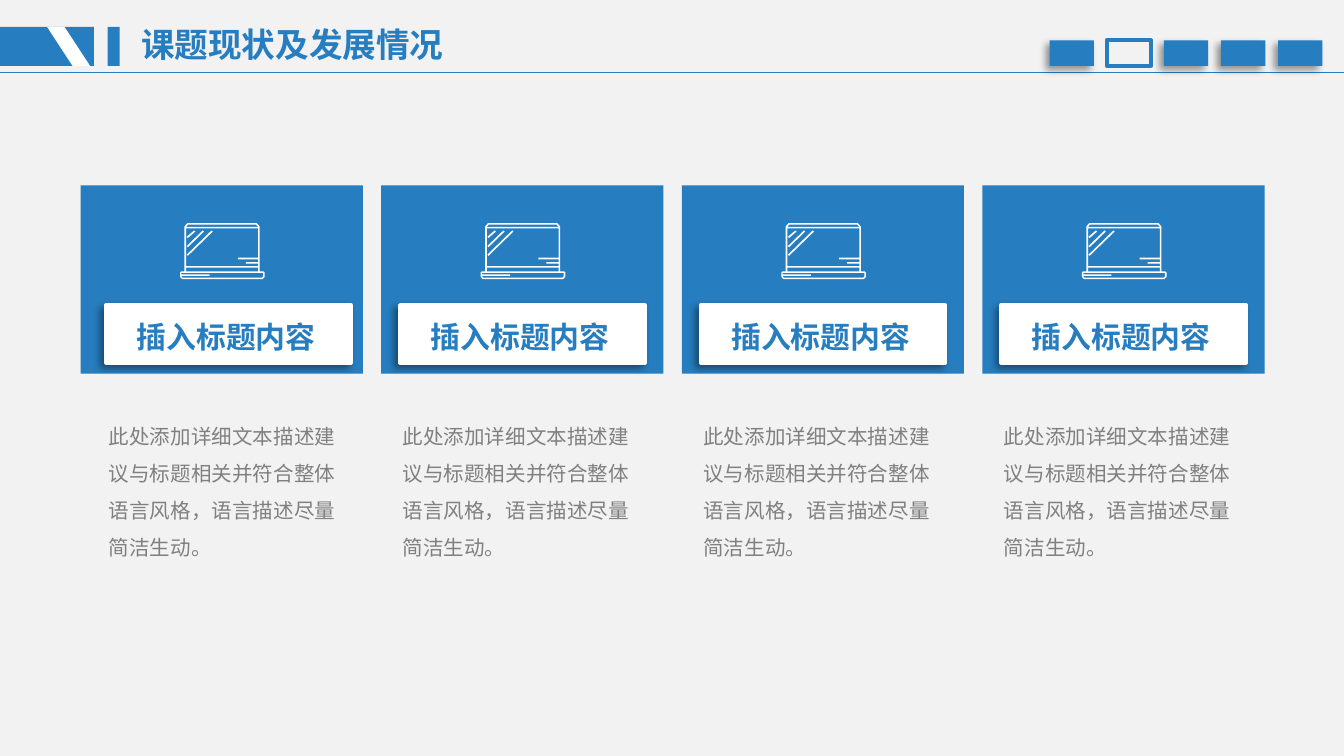
from lxml import etree
from pptx import Presentation
from pptx.dml.color import RGBColor
from pptx.enum.shapes import MSO_CONNECTOR, MSO_SHAPE
from pptx.enum.text import MSO_ANCHOR, MSO_AUTO_SIZE, PP_ALIGN
from pptx.oxml.ns import qn
from pptx.util import Emu, Inches, Pt

RECTANGLE = MSO_SHAPE.RECTANGLE
STRAIGHT = MSO_CONNECTOR.STRAIGHT
LEFT = PP_ALIGN.LEFT
TOP = MSO_ANCHOR.TOP
FIT_SHAPE = MSO_AUTO_SIZE.SHAPE_TO_FIT_TEXT
NO_FIT = MSO_AUTO_SIZE.NONE

FONT = "Noto Sans CJK SC"
COLORS = {"blue": "267DBF", "white": "FFFFFF", "background": "F2F2F2",
          "grey": "808080", "shadow": "000000"}
WIDTH = 10
HEIGHT = WIDTH * 9 / 16

# Grid, in inches
COLUMNS, COLUMN_LEFT, LAST_COLUMN_LEFT = 4, 0.6, 7.31
COLUMN_STEP = (LAST_COLUMN_LEFT - COLUMN_LEFT) / (COLUMNS - 1)
MARKERS, MARKER_LEFT, LAST_MARKER_LEFT = 5, 7.81, 9.51
MARKER_STEP = (LAST_MARKER_LEFT - MARKER_LEFT) / (MARKERS - 1)
CURRENT_MARKER = 1
FIRST_COLUMN_SHIFT = 0.05

TITLE = "课题现状及发展情况"
LABEL = "插入标题内容"
BODY = "此处添加详细文本描述建议与标题相关并符合整体语言风格，语言描述尽量简洁生动。"

# Laptop outline, its openings and the screen glare, in thousandths of an inch
LAPTOP = [
    [(33, 25), (55, 0), (570, 0), (592, 25), (592, 360), (622, 360), (630, 368),
     (630, 400), (615, 416), (15, 416), (0, 400), (0, 368), (8, 360), (33, 360)],
    [(46, 28), (60, 11), (565, 11), (581, 28)],
    [(46, 39), (581, 39), (581, 258), (430, 258), (430, 270), (581, 270),
     (581, 290), (490, 290), (490, 302), (581, 302), (581, 320), (46, 320)],
    [(46, 331), (581, 331), (581, 360), (46, 360)],
    [(11, 371), (618, 371), (618, 398), (610, 405), (18, 405), (11, 397),
     (11, 392), (220, 392), (220, 381), (11, 381)],
] + [
    [(50, bottom - 5), (end - 5, 55), (end + 4, 63), (58, bottom + 4)]
    for end, bottom in [(110, 107), (174, 176), (240, 240)]
]


def rgb(name):
    return RGBColor.from_string(COLORS[name])


def style_shape(shape, fill=None, line=None, width=2):
    shape.shadow.inherit = False
    if fill:
        shape.fill.solid()
        shape.fill.fore_color.rgb = rgb(fill)
    else:
        shape.fill.background()
    if line:
        shape.line.color.rgb = rgb(line)
        shape.line.width = Pt(width)
    else:
        shape.line.fill.background()


def add_rectangle(shapes, left, top, width, height, **style):
    shape = shapes.add_shape(RECTANGLE, Inches(left), Inches(top),
                             Inches(width), Inches(height))
    style_shape(shape, **style)
    return shape


def add_shadow(shape):
    effects = shape.element.spPr.find(qn("a:effectLst"))
    shadow = etree.SubElement(effects, qn("a:outerShdw"), blurRad=str(Pt(4)),
                              dist=str(Pt(3)), dir=str(135 * 60000),
                              algn="tr", rotWithShape="0")
    color = etree.SubElement(shadow, qn("a:srgbClr"), val=COLORS["shadow"])
    etree.SubElement(color, qn("a:alpha"), val="40000")


def add_outline(shapes, left, top, contours, fill):
    builder = None
    for first, *rest in contours:
        if builder is None:
            builder = shapes.build_freeform(*first, scale=Inches(1) / 1000)
        else:
            builder.move_to(*first)
        builder.add_line_segments(rest, close=True)
    shape = builder.convert_to_shape(Inches(left), Inches(top))
    style_shape(shape, fill=fill)


def write_text(shape, text, size, color, bold=False, spacing=None):
    frame = shape.text_frame
    frame.word_wrap = True
    frame.vertical_anchor = TOP
    paragraph = frame.paragraphs[0]
    paragraph.alignment = LEFT
    if spacing:
        paragraph.line_spacing = spacing
    run = paragraph.add_run()
    run.text = text
    run.font.name = FONT
    run.font.size = Pt(size)
    run.font.bold = bold
    run.font.color.rgb = rgb(color)
    latin = run.font._element.find(qn("a:latin"))
    latin.addnext(latin.makeelement(qn("a:ea"), {"typeface": FONT}))
    return frame


def add_header(slide):
    shapes = slide.shapes
    # Emblem with its slanted stripe
    add_rectangle(shapes, 0, 0.2, 0.7, 0.29, fill="blue")
    stripe = [(350, 200), (480, 200), (670, 490), (540, 490)]
    add_outline(shapes, 0, 0, [stripe], "white")
    add_rectangle(shapes, 0.8, 0.2, 0.09, 0.29, fill="blue")

    # Title
    title = shapes.title
    title.left, title.top = Inches(0.95), Inches(0.13)
    title.width, title.height = Inches(2.51), Inches(0.4)
    write_text(title, TITLE, 18, "blue", bold=True).auto_size = FIT_SHAPE

    # Rule across the slide
    rule = shapes.add_connector(STRAIGHT, 0, Inches(0.54), Inches(WIDTH), Inches(0.54))
    rule.line.color.rgb = rgb("blue")
    rule.line.width = Pt(1)
    etree.SubElement(rule._element.spPr, qn("a:effectLst"))

    # Section markers
    for index in range(MARKERS):
        box = (MARKER_LEFT + index * MARKER_STEP, 0.3, 0.33, 0.19)
        if index == CURRENT_MARKER:
            add_rectangle(shapes, *box, line="blue")
        else:
            add_shadow(add_rectangle(shapes, *box, fill="blue"))


def add_label(shapes, left, top):
    group = shapes.add_group_shape()
    plate = add_rectangle(group.shapes, left, top, 1.82, 0.43,
                          fill="white", line="white")
    add_shadow(plate)
    box = group.shapes.add_textbox(Inches(left + 0.13), Inches(top + 0.05),
                                   Inches(1.69), Inches(0.37))
    write_text(box, LABEL, 16, "blue", bold=True).auto_size = FIT_SHAPE


def add_body(shapes, left, top):
    box = shapes.add_textbox(Inches(left), Inches(top), Inches(2.05), Inches(1.29))
    frame = write_text(box, BODY, 11, "grey", spacing=1.5)
    frame.auto_size = NO_FIT
    frame.margin_left = frame.margin_right = Inches(0.16)
    frame.margin_top = frame.margin_bottom = Emu(0)


def add_card(shapes, column):
    left = COLUMN_LEFT + column * COLUMN_STEP
    shift = FIRST_COLUMN_SHIFT if column == 0 else 0
    add_rectangle(shapes, left, 1.38, 2.1, 1.4, fill="blue")
    add_outline(shapes, left + 0.74, 1.66, LAPTOP, "white")
    add_label(shapes, left + 0.14 + shift, 2.27)
    add_body(shapes, left + shift, 3.06)


def main():
    presentation = Presentation()
    presentation.slide_width = Inches(WIDTH)
    presentation.slide_height = Inches(HEIGHT)
    slide = presentation.slides.add_slide(presentation.slide_layouts[5])
    slide.background.fill.solid()
    slide.background.fill.fore_color.rgb = rgb("background")

    add_header(slide)
    for column in range(COLUMNS):
        add_card(slide.shapes, column)
    presentation.save("out.pptx")


if __name__ == "__main__":
    main()
